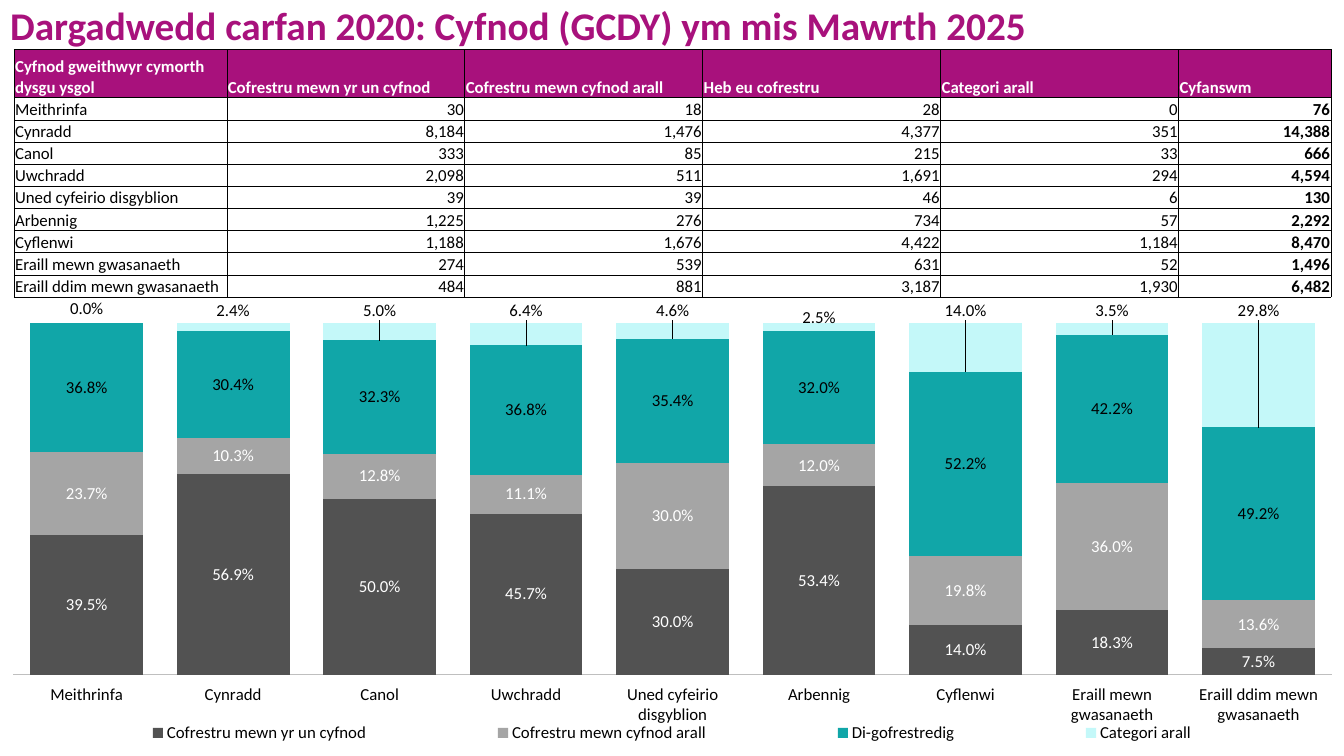
from lxml.etree import SubElement
from pptx import Presentation
from pptx.chart.data import CategoryChartData
from pptx.dml.color import RGBColor
from pptx.enum.chart import XL_CHART_TYPE, XL_LABEL_POSITION, XL_LEGEND_POSITION, XL_TICK_LABEL_POSITION, XL_TICK_MARK
from pptx.enum.text import MSO_ANCHOR, MSO_AUTO_SIZE, PP_ALIGN
from pptx.oxml import parse_xml
from pptx.oxml.ns import nsdecls, qn
from pptx.util import Inches, Pt

MAGENTA = RGBColor(0xA8, 0x11, 0x7C)
WHITE = RGBColor(0xFF, 0xFF, 0xFF)
BLACK = RGBColor(0, 0, 0)
AXIS_GREY = RGBColor(0xBF, 0xBF, 0xBF)
DARK_GREY = RGBColor(0x52, 0x52, 0x52)
MID_GREY = RGBColor(0xA5, 0xA5, 0xA5)
TEAL = RGBColor(0x11, 0xA6, 0xA8)
PALE_CYAN = RGBColor(0xC4, 0xF8, 0xF9)
FONT = "Calibri"
PERCENT = "0.0%"

HEADINGS = ["Cyfnod gweithwyr cymorth dysgu ysgol", "Cofrestru mewn yr un cyfnod",
            "Cofrestru mewn cyfnod arall", "Heb eu cofrestru", "Categori arall", "Cyfanswm"]
PHASES = [
    ("Meithrinfa", 30, 18, 28, 0, 76),
    ("Cynradd", 8184, 1476, 4377, 351, 14388),
    ("Canol", 333, 85, 215, 33, 666),
    ("Uwchradd", 2098, 511, 1691, 294, 4594),
    ("Uned cyfeirio disgyblion", 39, 39, 46, 6, 130),
    ("Arbennig", 1225, 276, 734, 57, 2292),
    ("Cyflenwi", 1188, 1676, 4422, 1184, 8470),
    ("Eraill mewn gwasanaeth", 274, 539, 631, 52, 1496),
    ("Eraill ddim mewn gwasanaeth", 484, 881, 3187, 1930, 6482),
]
COLUMN_WIDTHS = [2.11, 2.36, 2.36, 2.36, 2.36, 1.51]
OUTCOMES = [
    ("Cofrestru mewn yr un cyfnod", DARK_GREY, WHITE,
     [0.395, 0.569, 0.5, 0.457, 0.3, 0.534, 0.14, 0.183, 0.075]),
    ("Cofrestru mewn cyfnod arall", MID_GREY, WHITE,
     [0.237, 0.103, 0.128, 0.111, 0.3, 0.12, 0.198, 0.36, 0.136]),
    ("Di-gofrestredig", TEAL, BLACK,
     [0.368, 0.304, 0.323, 0.368, 0.354, 0.32, 0.522, 0.422, 0.492]),
    ("Categori arall", PALE_CYAN, BLACK,
     [0, 0.024, 0.05, 0.064, 0.046, 0.025, 0.14, 0.035, 0.298]),
]
UNMOVED_LABELS = ("Meithrinfa", "Arbennig")


def style_font(font, color, size=12, bold=False):
    font.name = FONT
    font.size = Pt(size)
    font.bold = bold
    font.color.rgb = color


def add_title(slide, left, top, width, height):
    title = slide.shapes.title
    title.left, title.top, title.width, title.height = map(Inches, (left, top, width, height))
    frame = title.text_frame
    frame.auto_size = MSO_AUTO_SIZE.NONE
    frame.word_wrap = True
    frame.vertical_anchor = MSO_ANCHOR.MIDDLE
    heading = frame.paragraphs[0]
    heading.alignment = PP_ALIGN.LEFT
    heading.line_spacing = 0.9
    run = heading.add_run()
    run.text = "Dargadwedd carfan 2020: Cyfnod (GCDY) ym mis Mawrth 2025"
    style_font(run.font, MAGENTA, 28, True)


def add_borders(cell):
    properties = cell._tc.get_or_add_tcPr()
    for side in ("lnL", "lnR", "lnT", "lnB"):
        border = SubElement(properties, qn(f"a:{side}"), w=str(Pt(0.5)))
        fill = SubElement(border, qn("a:solidFill"))
        SubElement(fill, qn("a:srgbClr"), val=str(BLACK))


def fill_cell(cell, value, is_heading, is_total):
    add_borders(cell)
    cell.margin_left = cell.margin_right = cell.margin_top = Inches(0.01)
    cell.margin_bottom = 0
    cell.vertical_anchor = MSO_ANCHOR.BOTTOM
    if is_heading:
        cell.fill.solid()
        cell.fill.fore_color.rgb = MAGENTA
    else:
        cell.fill.background()
    is_number = isinstance(value, int)
    paragraph = cell.text_frame.paragraphs[0]
    paragraph.alignment = PP_ALIGN.RIGHT if is_number else PP_ALIGN.LEFT
    run = paragraph.add_run()
    run.text = f"{value:,}" if is_number else value
    style_font(run.font, WHITE if is_heading else BLACK, bold=is_heading or is_total)


def add_retention_table(slide, left, top, width, height):
    rows = [HEADINGS, *PHASES]
    table = slide.shapes.add_table(len(rows), len(HEADINGS),
                                   *map(Inches, (left, top, width, height))).table
    table.horz_banding = False
    for column, column_width in zip(table.columns, COLUMN_WIDTHS):
        column.width = Inches(column_width)
    for r, values in enumerate(rows):
        table.rows[r].height = Inches(0.22 if r else 0.48)
        for c, value in enumerate(values):
            fill_cell(table.cell(r, c), value, r == 0, c == len(HEADINGS) - 1)


def manual_layout(modes, **places):
    parts = [f'<c:{name} val="{mode}"/>' for name, mode in modes.items()]
    parts += [f'<c:{name} val="{value}"/>' for name, value in places.items()]
    return parse_xml(f'<c:layout {nsdecls("c")}><c:manualLayout>{"".join(parts)}'
                     '</c:manualLayout></c:layout>')


def lift_label(point, share):
    label = point.data_label
    style_font(label.font, BLACK)
    label.position = XL_LABEL_POSITION.INSIDE_BASE
    entry = label._dLbl
    entry.insert(1, manual_layout({}, x=0, y=round(0.004 - 0.766 * share, 3)))
    entry.insert(2, parse_xml(f'<c:numFmt {nsdecls("c")} formatCode="{PERCENT}" sourceLinked="0"/>'))


def style_outcome(series, color, label_color, is_top):
    series.format.fill.solid()
    series.format.fill.fore_color.rgb = color
    labels = series.data_labels
    labels.show_value = True
    labels.number_format = PERCENT
    labels.number_format_is_linked = False
    labels.position = XL_LABEL_POSITION.INSIDE_BASE if is_top else XL_LABEL_POSITION.CENTER
    style_font(labels.font, label_color)
    if is_top:
        for i, (phase, share) in enumerate(zip(PHASES, series.values)):
            if phase[0] not in UNMOVED_LABELS:
                lift_label(series.points[i], share)


def add_retention_chart(slide, left, top, width, height):
    data = CategoryChartData(number_format=PERCENT)
    data.categories = [phase[0] for phase in PHASES]
    for name, _, _, shares in OUTCOMES:
        data.add_series(name, shares)
    chart = slide.shapes.add_chart(XL_CHART_TYPE.COLUMN_STACKED_100,
                                   *map(Inches, (left, top, width, height)), data).chart
    chart.has_title = False
    style_font(chart.font, BLACK)
    plot = chart.plots[0]
    plot.gap_width = 30
    plot.overlap = 100
    plot.vary_by_categories = False
    for series, (name, color, label_color, _) in zip(plot.series, OUTCOMES):
        style_outcome(series, color, label_color, name == OUTCOMES[-1][0])

    chart.value_axis.visible = False
    chart.value_axis.has_major_gridlines = False
    phase_axis = chart.category_axis
    phase_axis.major_tick_mark = XL_TICK_MARK.NONE
    phase_axis.tick_label_position = XL_TICK_LABEL_POSITION.LOW
    phase_axis.format.line.color.rgb = AXIS_GREY
    phase_axis.format.line.width = Pt(0.75)
    style_font(phase_axis.tick_labels.font, BLACK)

    chart.has_legend = True
    legend = chart.legend
    legend.position = XL_LEGEND_POSITION.BOTTOM
    legend.include_in_layout = False
    style_font(legend.font, BLACK)
    edges = {"xMode": "edge", "yMode": "edge"}
    for layout in legend._element.findall(qn("c:layout")):
        legend._element.remove(layout)
    legend._element.find(qn("c:legendPos")).addnext(
        manual_layout(edges, x=0.02, y=0.92, w=0.96, h=0.06))
    plot_area = chart._chartSpace.chart.plotArea
    for layout in plot_area.findall(qn("c:layout")):
        plot_area.remove(layout)
    plot_area.insert(0, manual_layout({"layoutTarget": "inner", **edges},
                                      x=0.01, y=0.057, w=0.981, h=0.766))


def main():
    deck = Presentation()
    deck.slide_width, deck.slide_height = Inches(13.33), Inches(7.5)
    slide = deck.slides.add_slide(deck.slide_layouts[5])
    add_title(slide, 0, 0, 13.33, 0.55)
    add_retention_table(slide, 0.14, 0.49, 13.06, 2.46)
    add_retention_chart(slide, 0, 2.94, 13.33, 4.56)
    deck.save("out.pptx")


if __name__ == "__main__":
    main()
